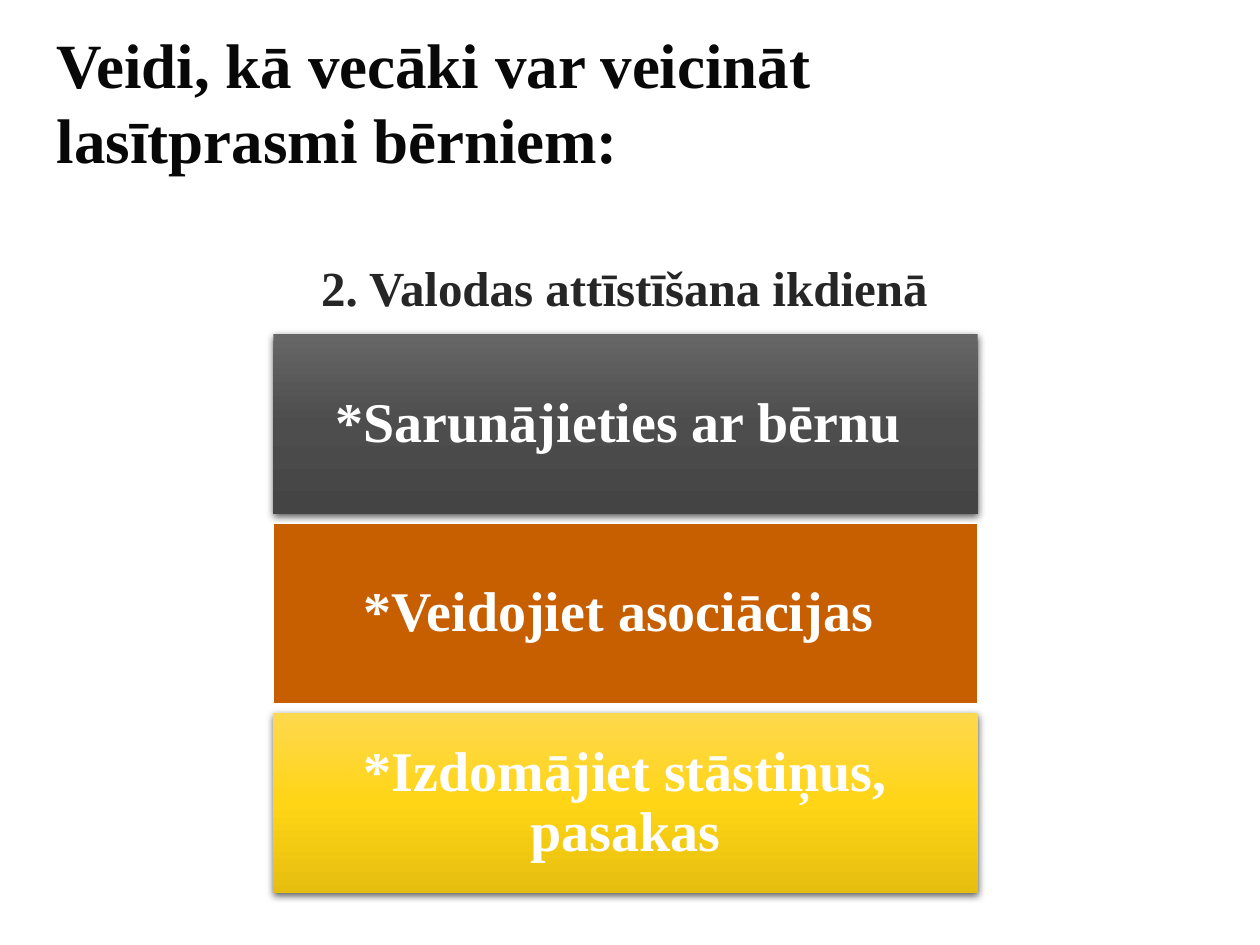
from copy import deepcopy
from lxml.etree import SubElement as Sub
from pptx import Presentation
from pptx.dml.color import RGBColor as Rgb
from pptx.enum.shapes import MSO_SHAPE as Form
from pptx.enum.text import MSO_ANCHOR as Anchor, MSO_AUTO_SIZE as Auto, PP_ALIGN as Align
from pptx.oxml.ns import qn
from pptx.util import Inches, Pt

THEME = {
    "font": "Times New Roman",
    "title": ("080808", 36),
    "lead": ("262626", 28),
    "card": ("FFFFFF", 32),
    "edge": "FFFFFF",
    "shade": "000000",
}
CARDS = [
    ("*Sarunājieties ar bērnu ", ["666666", "4D4D4D", "444444"]),
    ("*Veidojiet asociācijas ", ["C75E00"]),
    ("*Izdomājiet stāstiņus, pasakas", ["FFD84E", "FFD515", "E5BE10"]),
]

deck = Presentation()
deck.slide_width, deck.slide_height = Inches(10), Inches(7.5)
COL, ROW = deck.slide_width / 100, deck.slide_height / 75
slide = deck.slides.add_slide(deck.slide_layouts[1])
title, body = slide.placeholders


def place(shape, left, top, width, height):
    """Set the box in grid columns and rows."""
    box = {"left": left * COL, "top": top * ROW, "width": width * COL, "height": height * ROW}
    for name, value in box.items():
        setattr(shape, name, round(value))


def write(shape, text, style, align, frame):
    """Fill the shape with one bold paragraph in a theme style."""
    for name, value in frame.items():
        setattr(shape.text_frame, name, value)
    para = shape.text_frame.paragraphs[0]
    para.text, para.alignment, para.space_before = text, align, Pt(0)
    tone, size = THEME[style]
    look = {"name": THEME["font"], "size": Pt(size), "bold": True}
    for name, value in look.items():
        setattr(para.runs[0].font, name, value)
    para.runs[0].font.color.rgb = Rgb.from_string(tone)
    return para


base = {"word_wrap": True, "auto_size": Auto.NONE}
place(title, 3.5, 5.2, 81.1, 5.6)
write(title, "Veidi, kā vecāki var veicināt lasītprasmi bērniem:", "title",
      Align.LEFT, base | {"vertical_anchor": Anchor.MIDDLE})

place(body, 3.5, 19.4, 92.1, 52.7)
lead = write(body, "2. Valodas attīstīšana ikdienā", "lead", Align.CENTER,
             base | {"vertical_anchor": Anchor.TOP, "margin_top": Inches(0.1)})
props = lead._p.get_or_add_pPr()
props.set("marL", "0")
props.set("indent", "0")
Sub(props, qn("a:buNone"))

inset = {f"margin_{side}": Inches(0.09) for side in ("left", "top", "right", "bottom")}
for i, (text, tones) in enumerate(CARDS):
    card = slide.shapes.add_shape(Form.RECTANGLE, 0, 0, 0, 0)
    place(card, 21.7, 26.5 + 15.05 * i, 55.9, 14.3)
    card.shadow.inherit = False
    if len(tones) == 1:
        card.fill.solid()
        card.fill.fore_color.rgb = Rgb.from_string(tones[0])
        card.line.color.rgb = Rgb.from_string(THEME["edge"])
        card.line.width = Pt(1)
    else:
        card.line.fill.background()
        card.fill.gradient()
        card.fill.gradient_angle = 270
        first = card._element.spPr.find(".//" + qn("a:gs"))
        first.addnext(deepcopy(first))
        for k, (stop, tone) in enumerate(zip(card.fill.gradient_stops, tones)):
            stop.position = k / 2
            stop.color.rgb = Rgb.from_string(tone)
        effect = card._element.spPr.find(qn("a:effectLst"))
        cast = Sub(effect, qn("a:outerShdw"), blurRad=str(Pt(4.5)), dist=str(Pt(1.5)),
                   dir="5400000", rotWithShape="0")
        shade = Sub(cast, qn("a:srgbClr"), val=THEME["shade"])
        Sub(shade, qn("a:alpha"), val="63000")
    para = write(card, text, "card", Align.CENTER,
                 base | inset | {"vertical_anchor": Anchor.MIDDLE})
    para.line_spacing = 0.9

deck.save("out.pptx")
